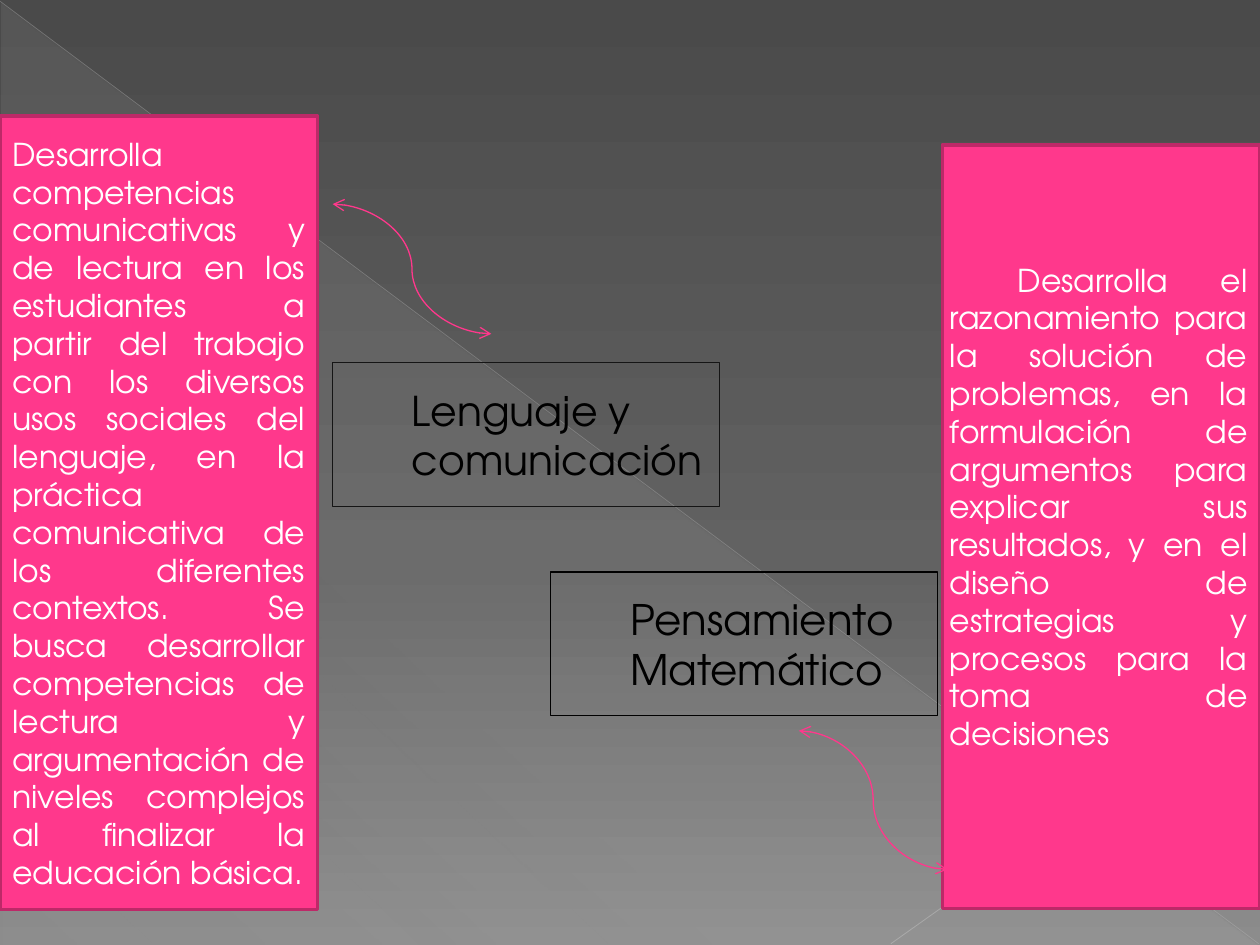
from typing import NamedTuple

from lxml.etree import Element, SubElement
from pptx import Presentation
from pptx.dml.color import RGBColor
from pptx.enum.shapes import MSO_CONNECTOR, MSO_SHAPE
from pptx.enum.text import MSO_ANCHOR, MSO_AUTO_SIZE, PP_ALIGN
from pptx.oxml.ns import qn
from pptx.util import Emu, Inches, Pt

FONT = "TeX Gyre Adventor"
PINK, EDGE, WHITE, BLACK = "FF388C", "BD2968", "FFFFFF", "000000"
WIDE, HIGH = Inches(10), Inches(7.5)


class Box(NamedTuple):
    """A left, top, width and height in percent of the slide."""
    left: float
    top: float
    width: float
    height: float


class Wire(NamedTuple):
    """A line between two points in percent of the slide."""
    kind: MSO_CONNECTOR
    start: tuple
    end: tuple
    color: str
    weight: float
    alpha: int = 100
    arrows: bool = False


class Label(NamedTuple):
    """A framed heading."""
    box: Box
    text: str
    size: float
    edge: str


RAYS = [
    Wire(MSO_CONNECTOR.STRAIGHT, (0, 0.13), (99.9, 99.87), "BFBFBF", 0.39, 35),
    Wire(MSO_CONNECTOR.STRAIGHT, (100, 72.13), (70.7, 99.87), "C6C6C6", 0.47, 45),
]
CURVES = [
    Wire(MSO_CONNECTOR.CURVE, (63.4, 77.33), (75.2, 92), PINK, 0.75, arrows=True),
    Wire(MSO_CONNECTOR.CURVE, (26.4, 21.6), (39, 35.33), PINK, 0.75, arrows=True),
]
MATH = Label(Box(43.7, 60.53, 30.7, 15.2), "Pensamiento Matemático", 24, BLACK)
SPEECH = Label(Box(26.4, 38.4, 30.7, 15.2), "Lenguaje y comunicación", 23.4, "151515")
SHADE = Box(0.1, 0.27, 99.8, 99.73)
LEFT = Box(0, 12.27, 25.2, 84)
RIGHT = Box(74.8, 15.33, 25.2, 80.8)
NOTE = Box(74.4, 26.93, 25.6, 53.87)
SPEECH_TEXT = (
    "Desarrolla competencias comunicativas y de lectura en los estudiantes a partir "
    "del trabajo con los diversos usos sociales del lenguaje, en la práctica "
    "comunicativa de los diferentes contextos. Se busca desarrollar competencias de "
    "lectura y argumentación de niveles complejos al finalizar la educación básica."
)
MATH_TEXT = (
    "Desarrolla el razonamiento para la solución de problemas, en la formulación de "
    "argumentos para explicar sus resultados, y en el diseño de estrategias y "
    "procesos para la toma de decisiones"
)


def rgb(code: str) -> RGBColor:
    """Turn a hex string into a colour."""
    return RGBColor.from_string(code)


def spot(x: float, y: float) -> tuple:
    """Turn percentages into slide lengths."""
    return Emu(round(WIDE * x / 100)), Emu(round(HIGH * y / 100))


def frame(box: Box) -> tuple:
    """Give the four lengths of a box."""
    return spot(box.left, box.top) + spot(box.width, box.height)


def tint(node, code: str, alpha: int = 100) -> None:
    """Add a colour with its opacity to an XML node."""
    color = SubElement(node, qn("a:srgbClr"), val=code)
    if alpha < 100:
        SubElement(color, qn("a:alpha"), val=str(alpha * 1000))


def blend(item, fill, stops: list, angle: int) -> None:
    """Fill an item with a linear gradient."""
    fill.gradient()
    grad = item.element.find(".//" + qn("a:gradFill"))
    for node in list(grad):
        grad.remove(node)
    group = SubElement(grad, qn("a:gsLst"))
    for place, code, alpha in stops:
        tint(SubElement(group, qn("a:gs"), pos=str(place * 1000)), code, alpha)
    SubElement(grad, qn("a:lin"), ang=str(angle * 60000), scaled="0")


def wire(slide, data: Wire) -> None:
    """Draw a line or a curve."""
    link = slide.shapes.add_connector(data.kind, *spot(*data.start), *spot(*data.end))
    link.line.width = Pt(data.weight)
    link.line.color.rgb = rgb(data.color)
    props = link.element.spPr
    line = props.find(qn("a:ln"))
    if data.alpha < 100:
        color = line.find(".//" + qn("a:srgbClr"))
        SubElement(color, qn("a:alpha"), val=str(data.alpha * 1000))
    if data.arrows:
        for end in ("a:headEnd", "a:tailEnd"):
            SubElement(line, qn(end), type="arrow")
    SubElement(props, qn("a:effectLst"))


def block(slide, kind: MSO_SHAPE, box: Box):
    """Add a shape without a shadow."""
    shape = slide.shapes.add_shape(kind, *frame(box))
    shape.shadow.inherit = False
    return shape


def panel(slide, box: Box):
    """Draw a pink rectangle."""
    shape = block(slide, MSO_SHAPE.RECTANGLE, box)
    shape.fill.solid()
    shape.fill.fore_color.rgb = rgb(PINK)
    shape.line.color.rgb = rgb(EDGE)
    shape.line.width = Pt(2)
    return shape


def write(shape, text: str, size: float, color: str, align: PP_ALIGN):
    """Set the one paragraph of a shape and return it."""
    shape.text_frame.word_wrap = True
    para = shape.text_frame.paragraphs[0]
    para.text = text
    para.alignment = align
    para.font.name = FONT
    para.font.size = Pt(size)
    para.font.color.rgb = rgb(color)
    return para


def label(shape, data: Label) -> None:
    """Format a shape as a framed heading."""
    shape.left, shape.top, shape.width, shape.height = frame(data.box)
    shape.fill.background()
    shape.line.color.rgb = rgb(data.edge)
    shape.line.width = Pt(0.75)
    para = write(shape, data.text, data.size, BLACK, PP_ALIGN.LEFT)
    shape.text_frame.auto_size = MSO_AUTO_SIZE.NONE
    shape.text_frame.vertical_anchor = MSO_ANCHOR.MIDDLE
    props = para.font.color and para.runs[0].font
    props.color.rgb = rgb(BLACK)
    outline = Element(qn("a:ln"), w=str(Pt(0.5)))
    tint(SubElement(outline, qn("a:solidFill")), "B12761")
    shape.element.find(".//" + qn("a:rPr")).insert(0, outline)
    indent(shape, "marL", 0.53)


def indent(shape, name: str, inches: float) -> None:
    """Set the left margin or first-line indent of a shape's text."""
    shape.element.find(".//" + qn("a:pPr")).set(name, str(Inches(inches)))


def main() -> None:
    """Build the slide."""
    deck = Presentation()
    deck.slide_width, deck.slide_height = WIDE, HIGH
    slide = deck.slides.add_slide(deck.slide_layouts[5])
    title = slide.shapes.title
    ground = [(0, "4A4A4A", 100), (60, "626262", 100), (100, "8C8C8C", 100)]
    blend(slide, slide.background.fill, ground, 90)

    shade = block(slide, MSO_SHAPE.RIGHT_TRIANGLE, SHADE)
    shade.line.fill.background()
    veil = [(0, "D2D2D2", 10), (70, "D2D2D2", 8), (100, "D2D2D2", 1)]
    blend(shade, shade.fill, veil, 133)
    for ray in RAYS:
        wire(slide, ray)

    left = panel(slide, LEFT)
    write(left, SPEECH_TEXT, 18, WHITE, PP_ALIGN.JUSTIFY)
    left.text_frame.vertical_anchor = MSO_ANCHOR.MIDDLE
    panel(slide, RIGHT)
    note = slide.shapes.add_textbox(*frame(NOTE))
    write(note, MATH_TEXT, 18, WHITE, PP_ALIGN.JUSTIFY)
    note.text_frame.auto_size = MSO_AUTO_SIZE.SHAPE_TO_FIT_TEXT
    indent(note, "indent", 0.54)

    title.element.getparent().append(title.element)
    label(title, MATH)
    label(block(slide, MSO_SHAPE.RECTANGLE, SPEECH.box), SPEECH)
    for curve in CURVES:
        wire(slide, curve)
    deck.save("out.pptx")


if __name__ == "__main__":
    main()
